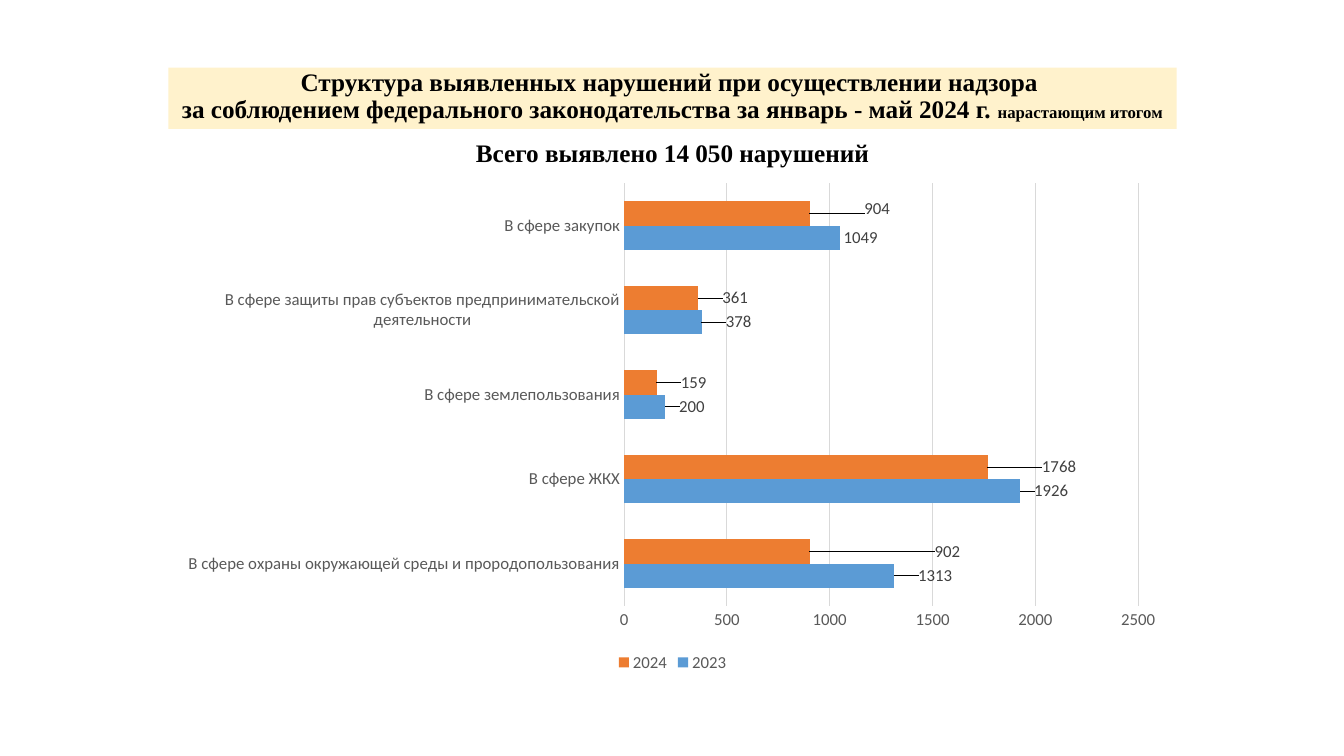
from dataclasses import dataclass

from lxml.etree import SubElement
from pptx import Presentation
from pptx.chart.axis import CategoryAxis, ValueAxis
from pptx.chart.chart import Chart
from pptx.chart.data import CategoryChartData
from pptx.chart.series import BarSeries
from pptx.dml.color import RGBColor
from pptx.enum.chart import (XL_CHART_TYPE, XL_LABEL_POSITION,
                             XL_LEGEND_POSITION, XL_TICK_MARK)
from pptx.enum.shapes import MSO_SHAPE
from pptx.enum.text import MSO_ANCHOR, PP_ALIGN
from pptx.oxml import parse_xml
from pptx.oxml.ns import nsdecls, qn
from pptx.slide import Slide
from pptx.text.text import Font, _Paragraph
from pptx.util import Inches, Pt


@dataclass(frozen=True)
class Theme:
    """Colours, faces and type sizes."""
    cream: str = "FFF2CC"
    black: str = "000000"
    gray: str = "595959"
    dark: str = "404040"
    grid: str = "D9D9D9"
    serif: str = "Times New Roman"
    sans: str = "Calibri"
    head: float = 18
    note: float = 12
    base: float = 10


@dataclass(frozen=True)
class Group:
    """A year of values with its label shifts as parts of the chart size."""
    name: str
    color: str
    vals: tuple[int, ...]
    shifts: tuple[tuple[float, float], ...]


THEME = Theme()
LEFT, WIDTH = 1.67, 10
FIELDS = (
    "В сфере охраны окружающей среды и прородопользования",
    "В сфере ЖКХ",
    "В сфере землепользования",
    "В сфере защиты прав субъектов предпринимательской деятельности",
    "В сфере закупок",
)
GROUPS = (
    Group("2023", "5B9BD5", (1313, 1926, 200, 378, 1049),
          ((0.02, 0), (0.01, 0), (0.01, 0), (0.02, 0), (0, 0))),
    Group("2024", "ED7D31", (902, 1768, 159, 361, 904),
          ((0.12, 0), (0.05, 0), (0.02, 0), (0.02, 0), (0.05, -0.01))),
)


def style(font: Font, *, size: float, color: str, face: str = THEME.sans,
          bold: bool = False) -> None:
    """Set a font."""
    font.size, font.name, font.bold = Pt(size), face, bold
    font.color.rgb = RGBColor.from_string(color)


def write(para: _Paragraph, text: str, *, size: float) -> None:
    """Add bold serif text, breaking at newlines."""
    for num, line in enumerate(text.split("\n")):
        if num:
            para.add_line_break()
        run = para.add_run()
        run.text = line
        style(run.font, size=size, color=THEME.black, face=THEME.serif, bold=True)


def banner(slide: Slide, top: float, high: float, space: float,
           anchor: MSO_ANCHOR, fill: str | None = None) -> _Paragraph:
    """Add a centred box and return its paragraph."""
    place = (Inches(LEFT), Inches(top), Inches(WIDTH), Inches(high))
    if fill:
        box = slide.shapes.add_shape(MSO_SHAPE.RECTANGLE, *place)
        box.shadow.inherit = False
        box.fill.solid()
        box.fill.fore_color.rgb = RGBColor.from_string(fill)
        box.line.fill.background()
    else:
        box = slide.shapes.add_textbox(*place)
    frame = box.text_frame
    frame.word_wrap = True
    frame.vertical_anchor = anchor
    para = frame.paragraphs[0]
    para.alignment, para.line_spacing = PP_ALIGN.CENTER, space
    return para


def trim(axis: CategoryAxis | ValueAxis) -> None:
    """Hide the line and ticks of an axis and set its font."""
    axis.major_tick_mark = axis.minor_tick_mark = XL_TICK_MARK.NONE
    axis.format.line.fill.background()
    style(axis.tick_labels.font, size=THEME.note, color=THEME.gray)


def frame_plot(chart: Chart) -> None:
    """Fix the inner plot area."""
    area = chart._chartSpace.chart.plotArea
    for old in area.findall(qn("c:layout")):
        area.remove(old)
    layout = parse_xml(f"<c:layout {nsdecls('c')}/>")
    area.insert(0, layout)
    manual = SubElement(layout, qn("c:manualLayout"))
    parts = {"layoutTarget": "inner", "xMode": "edge", "yMode": "edge",
             "x": 0.452, "y": 0.02, "w": 0.51, "h": 0.84}
    for name, val in parts.items():
        SubElement(manual, qn(f"c:{name}")).set("val", str(val))


def label(series: BarSeries, group: Group) -> None:
    """Show values beside the bars, each with its shift."""
    tags = series.data_labels
    tags.show_value = True
    tags.position = XL_LABEL_POSITION.OUTSIDE_END
    style(tags.font, size=THEME.note, color=THEME.dark)
    for num, (x, y) in enumerate(group.shifts):
        tag = series.points[num].data_label
        style(tag.font, size=THEME.note, color=THEME.dark)
        tag.position = XL_LABEL_POSITION.OUTSIDE_END
        node = tags._element.findall(qn("c:dLbl"))[num]
        node.insert(1, parse_xml(
            f'<c:layout {nsdecls("c")}><c:manualLayout><c:x val="{x}"/>'
            f'<c:y val="{y}"/></c:manualLayout></c:layout>'))


def graph(slide: Slide) -> None:
    """Add the bar chart."""
    data = CategoryChartData()
    data.categories = FIELDS
    for group in GROUPS:
        data.add_series(group.name, group.vals)
    chart = slide.shapes.add_chart(
        XL_CHART_TYPE.BAR_CLUSTERED, Inches(LEFT), Inches(1.72),
        Inches(WIDTH), Inches(4.99), data).chart
    style(chart.font, size=THEME.base, color=THEME.black)
    chart.has_title = False
    chart.has_legend = True
    chart.legend.position = XL_LEGEND_POSITION.BOTTOM
    chart.legend.include_in_layout = False
    style(chart.legend.font, size=THEME.note, color=THEME.gray)
    trim(chart.category_axis)
    axis = chart.value_axis
    trim(axis)
    axis.minimum_scale, axis.maximum_scale, axis.major_unit = 0, 2500, 500
    axis.has_major_gridlines = True
    line = axis.major_gridlines.format.line
    line.width = Pt(0.75)
    line.color.rgb = RGBColor.from_string(THEME.grid)
    plot = chart.plots[0]
    plot.gap_width, plot.overlap, plot.vary_by_categories = 150, 0, False
    for series, group in zip(plot.series, GROUPS):
        series.format.fill.solid()
        series.format.fill.fore_color.rgb = RGBColor.from_string(group.color)
        label(series, group)
    frame_plot(chart)


def main() -> None:
    """Build and save the slide."""
    deck = Presentation()
    deck.slide_width, deck.slide_height = Inches(13.33), Inches(7.5)
    slide = deck.slides.add_slide(deck.slide_layouts[6])
    title = banner(slide, 0.67, 0.61, 0.9, MSO_ANCHOR.BOTTOM, THEME.cream)
    write(title, "Структура выявленных нарушений при осуществлении надзора \n"
          "за соблюдением федерального законодательства за январь - май 2024 г. ",
          size=THEME.head)
    write(title, "нарастающим итогом", size=THEME.note)
    total = banner(slide, 1.37, 0.36, 0.8, MSO_ANCHOR.TOP)
    write(total, "Всего выявлено 14 050 нарушений", size=THEME.head)
    graph(slide)
    deck.save("out.pptx")


if __name__ == "__main__":
    main()
